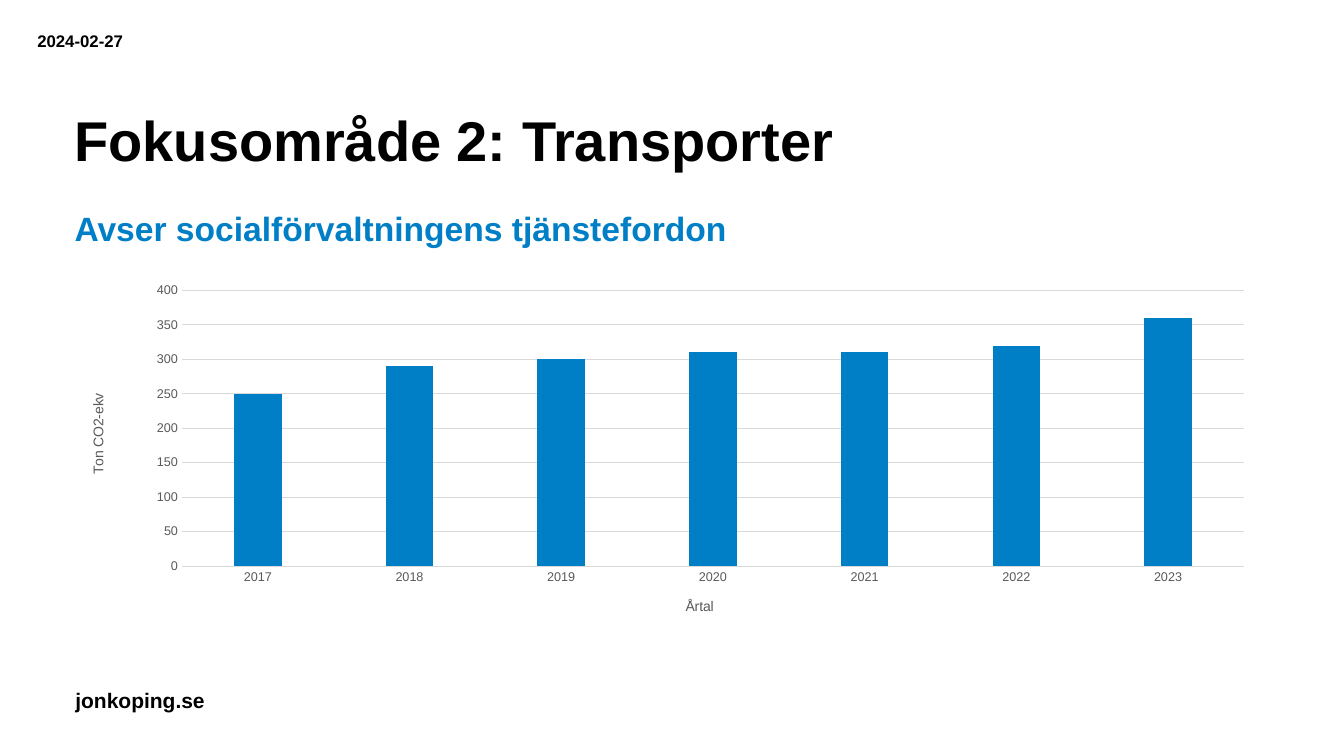
from lxml import etree
from pptx import Presentation
from pptx.chart.data import CategoryChartData
from pptx.dml.color import RGBColor
from pptx.enum.chart import XL_CHART_TYPE, XL_TICK_MARK
from pptx.enum.text import MSO_ANCHOR
from pptx.oxml.ns import qn
from pptx.util import Cm, Pt

COLUMNS = XL_CHART_TYPE.COLUMN_CLUSTERED
NO_TICKS = XL_TICK_MARK.NONE
TOP, BOTTOM = MSO_ANCHOR.TOP, MSO_ANCHOR.BOTTOM

THEME = {
    "font": "Arial",
    "black": RGBColor(0, 0, 0),
    "blue": RGBColor(0x00, 0x7F, 0xC7),
    "grey": RGBColor(0x59, 0x59, 0x59),
    "line": RGBColor(0xD9, 0xD9, 0xD9),
    "title": Pt(40),
    "subtitle": Pt(24),
    "site": Pt(15),
    "date": Pt(12),
    "axis_title": Pt(10),
    "axis": Pt(9),
    "rule": Pt(0.75),
}


def style_font(font, size, color, bold):
    font.name = THEME["font"]
    font.size = size
    font.color.rgb = color
    font.bold = bold


def place_part(element, index, settings):
    for old_layout in element.findall(qn("c:layout")):
        element.remove(old_layout)
    layout = etree.Element(qn("c:layout"))
    manual = etree.SubElement(layout, qn("c:manualLayout"))
    for name, value in settings.items():
        etree.SubElement(manual, qn("c:" + name)).set("val", str(value))
    element.insert(index, layout)


deck = Presentation()
deck.slide_width = Cm(33.87)
deck.slide_height = Cm(19.05)
page = deck.slides.add_slide(deck.slide_layouts[6])

texts = [
    ("jonkoping.se", "site", "black", TOP, False, (1.9, 17.32, 3.28, 0.64)),
    ("Fokusområde 2: Transporter", "title", "black", BOTTOM, True, (1.88, 1.27, 30.07, 3.1)),
    ("Avser socialförvaltningens tjänstefordon", "subtitle", "blue", BOTTOM, True, (1.88, 5.44, 30.07, 0.81)),
    ("2024-02-27", "date", "black", TOP, True, (0.94, 0.78, 2.49, 0.51)),
]
for text, size, color, anchor, wrap, place in texts:
    box = page.shapes.add_textbox(*map(Cm, place))
    frame = box.text_frame
    frame.margin_left = frame.margin_top = frame.margin_right = frame.margin_bottom = 0
    frame.word_wrap = wrap
    frame.vertical_anchor = anchor
    frame.text = text
    paragraph = frame.paragraphs[0]
    if size == "title":
        paragraph.line_spacing = 0.9
    style_font(paragraph.runs[0].font, THEME[size], THEME[color], True)

emissions = CategoryChartData()
emissions.categories = [str(year) for year in range(2017, 2024)]
emissions.add_series("Ton CO2-ekv", [250, 290, 300, 310, 310, 320, 360])
chart = page.shapes.add_chart(
    COLUMNS, Cm(1.88), Cm(6.96), Cm(30.07), Cm(9.02), emissions
).chart
style_font(chart.font, THEME["axis_title"], THEME["black"], False)
chart.has_legend = False
chart.has_title = False

plot = chart.plots[0]
plot.gap_width = 219
plot.overlap = -27
plot.vary_by_categories = False
fill = plot.series[0].format.fill
fill.solid()
fill.fore_color.rgb = THEME["blue"]

years, tons = chart.category_axis, chart.value_axis
axes = [
    (years, "Årtal", 0, {"x": 0.51, "y": 0.89}),
    (tons, "Ton CO2-ekv", -5400000, {"x": 0.01, "y": 0.32}),
]
for axis, title, rotation, place in axes:
    axis.major_tick_mark = axis.minor_tick_mark = NO_TICKS
    style_font(axis.tick_labels.font, THEME["axis"], THEME["grey"], False)
    frame = axis.axis_title.text_frame
    frame.text = title
    style_font(frame.paragraphs[0].runs[0].font, THEME["axis_title"], THEME["grey"], False)
    frame._txBody.bodyPr.set("rot", str(rotation))
    place_part(axis.axis_title._element, 1, {"xMode": "edge", "yMode": "edge", **place})

tons.minimum_scale, tons.maximum_scale, tons.major_unit = 0, 400, 50
tons.has_major_gridlines = True
tons.format.line.fill.background()
for line in (years.format.line, tons.major_gridlines.format.line):
    line.color.rgb = THEME["line"]
    line.width = THEME["rule"]

plot_area = chart._chartSpace.chart.plotArea
place_part(plot_area, 0, {
    "layoutTarget": "inner", "xMode": "edge", "yMode": "edge",
    "x": 0.09, "y": 0.04, "w": 0.89, "h": 0.77,
})

deck.save("out.pptx")
